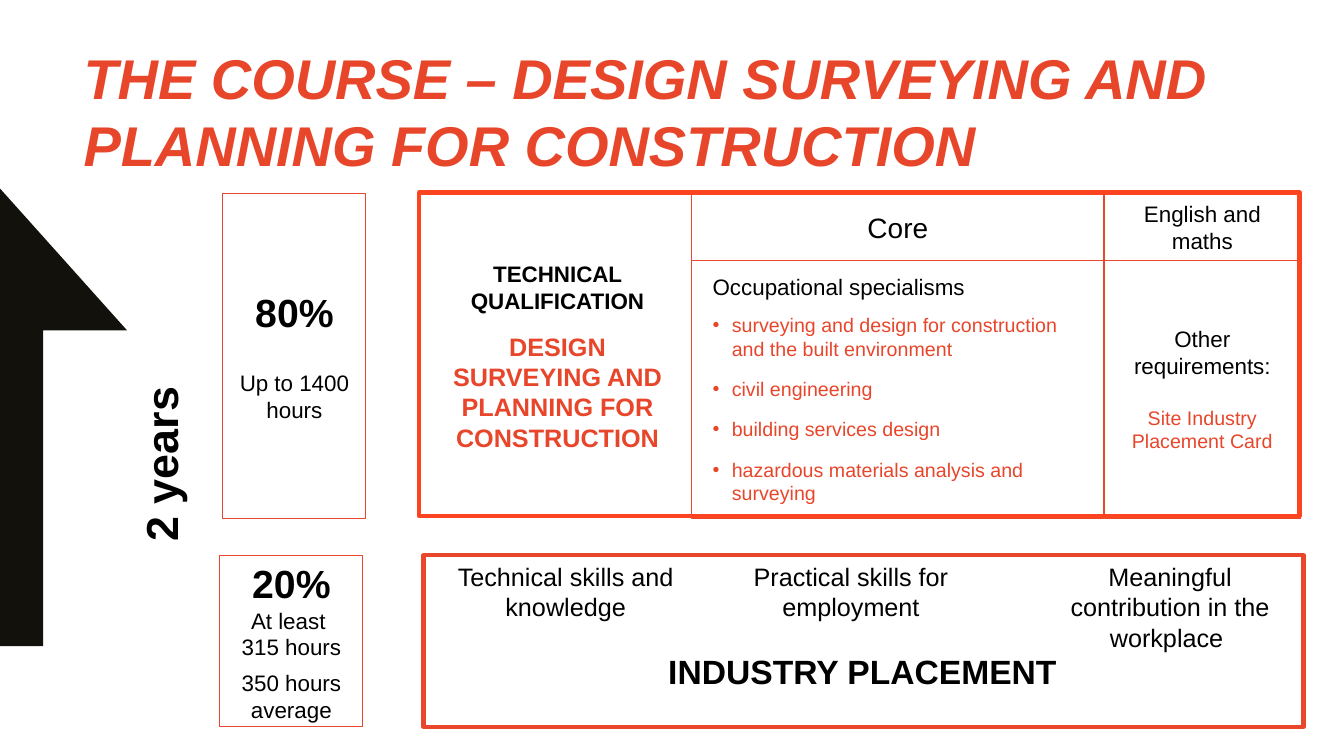
from lxml import etree
from pptx import Presentation
from pptx import util as u
from pptx.dml.color import RGBColor
from pptx.enum import shapes, text
from pptx.oxml.ns import qn

WIDTH, HEIGHT = 13.33, 7.5
COLORS = {"ink": "000000", "arrow": "12110C", "accent": "E8462B",
          "line": "E8472B", "frame": "FC4421", "white": "FFFFFF"}
CENTER, LEFT = text.PP_ALIGN.CENTER, text.PP_ALIGN.LEFT
MIDDLE, TOP = text.MSO_ANCHOR.MIDDLE, text.MSO_ANCHOR.TOP


def color(name):
    return RGBColor.from_string(COLORS[name])


def line(words, size=16, ink="ink", before=0, after=0, bullet=None, indent=False, **style):
    """Describe one paragraph; style holds extra font attributes."""
    return {"words": words, "ink": ink, "bullet": bullet, "indent": indent,
            "space": {"space_before": u.Pt(before), "space_after": u.Pt(after)},
            "font": {"name": "Arial", "size": u.Pt(size), **style}}


def write(shape, lines, align=CENTER, anchor=MIDDLE):
    frame = shape.text_frame
    frame.word_wrap = True
    frame.vertical_anchor = anchor
    for number, item in enumerate(lines):
        para = frame.add_paragraph() if number else frame.paragraphs[0]
        for key, value in {"alignment": align, **item["space"]}.items():
            setattr(para, key, value)
        if item["indent"]:
            props = para._p.get_or_add_pPr()
            props.set("marL", str(u.Inches(0.3)))
            props.set("indent", str(u.Inches(-0.19)))
        if item["bullet"]:
            para.level = 1
            etree.SubElement(props, qn("a:buFont")).set("typeface", "Arial")
            etree.SubElement(props, qn("a:buChar")).set("char", item["bullet"])
        span = para.add_run()
        span.text = item["words"]
        for key, value in item["font"].items():
            setattr(span.font, key, value)
        span.font.color.rgb = color(item["ink"])


def add_label(parts, box, lines, align=CENTER, anchor=MIDDLE):
    label = parts.add_textbox(*map(u.Inches, box))
    write(label, lines, align, anchor)
    return label


def add_box(parts, box, lines=(), edge="line", weight=0.75, fill=None, align=CENTER):
    shape = parts.add_shape(shapes.MSO_SHAPE.RECTANGLE, *map(u.Inches, box))
    shape.shadow.inherit = False
    if fill:
        shape.fill.solid()
        shape.fill.fore_color.rgb = color(fill)
    else:
        shape.fill.background()
    if edge:
        shape.line.color.rgb = color(edge)
        shape.line.width = u.Pt(weight)
    else:
        shape.line.fill.background()
    write(shape, lines, align)


def draw_arrow(parts, box):
    """Upward half arrow running off the left edge."""
    left, top, width, height = box
    shaft, neck = left + 0.34 * width, top + 0.31 * height
    points = [(left, top), (left + width, neck), (shaft, neck),
              (shaft, top + height), (left, top + height)]
    builder = parts.build_freeform(*map(u.Inches, points[0]), scale=1.0)
    builder.add_line_segments([tuple(map(u.Inches, p)) for p in points[1:]], close=True)
    arrow = builder.convert_to_shape()
    arrow.shadow.inherit = False
    arrow.fill.solid()
    arrow.fill.fore_color.rgb = color("arrow")
    arrow.line.fill.background()


def draw_duration(parts, box):
    label = add_label(parts, box, [line("2 years", 32, bold=True)])
    label.rotation = 270


def draw_shares(parts, box):
    """Share of time: classroom above, placement below."""
    left, top, width, height = box
    add_box(parts, (left + 0.03, top, width, 3.22), [
        line("80%", 28, after=24, bold=True),
        line("Up to 1400 hours")])
    add_box(parts, (left, top + height - 1.7, width, 1.7), [
        line("20%", 28, bold=True),
        line("At least "),
        line("315 hours", after=6),
        line("350 hours average")])


def draw_qualification(parts, box):
    """Heading column plus a two by two grid, inside a thick frame."""
    left, top, width, height = box
    widths, heights = (2.66, 4.09, 1.95), (0.65, 2.56)
    xs = [left + 0.04 + sum(widths[:n]) for n in range(3)]
    ys = [top + 0.02 + sum(heights[:n]) for n in range(2)]

    def cell(column, row):
        return xs[column], ys[row], widths[column], heights[row]

    add_label(parts, (xs[0], ys[0], widths[0], sum(heights)), [
        line("TECHNICAL QUALIFICATION", after=6, bold=True),
        line("DESIGN SURVEYING AND PLANNING FOR CONSTRUCTION", 18, "accent",
             before=6, after=6, bold=True)])
    add_box(parts, cell(1, 0), [line("Core", 20)])
    specialisms = ["surveying and design for construction and the built environment",
                   "civil engineering", "building services design",
                   "hazardous materials analysis and surveying"]
    add_box(parts, cell(1, 1), [line("Occupational specialisms", after=3, indent=True)] + [
        line(name, 14, "accent", before=6, after=6, bullet="•", indent=True)
        for name in specialisms], align=LEFT)
    add_box(parts, cell(2, 0), [line("English and maths")])
    add_box(parts, cell(2, 1), [
        line("Other requirements:", after=19),
        line("Site Industry Placement Card", 14, "accent")])
    add_box(parts, box, edge="frame", weight=3)


def draw_placement(parts, box):
    """Three outcomes over the placement heading, in one group."""
    left, top, width, height = box
    group = parts.add_group_shape().shapes
    outcomes = [(0.05, 2.72, 0.83, "Technical skills and knowledge"),
                (2.86, 2.76, 0.81, "Practical skills for employment"),
                (6.12, 2.57, 1.17, "Meaningful contribution in the workplace ")]
    add_box(group, (left + 0.11, top + 0.57 * height, width - 0.15, 0.35),
            [line("INDUSTRY PLACEMENT ", 24, bold=True)], edge=None, fill="white")
    add_box(group, box, weight=3)
    for offset, span_width, depth, words in outcomes:
        add_label(group, (left + offset, top + 0.01, span_width, depth),
                  [line(words, 18)], anchor=TOP)


def draw_title(parts, box):
    add_label(parts, box, [
        line("THE COURSE – DESIGN SURVEYING AND PLANNING FOR CONSTRUCTION", 40,
             "accent", bold=True, italic=True)], align=LEFT, anchor=TOP)


def main():
    deck = Presentation()
    deck.slide_width, deck.slide_height = u.Inches(WIDTH), u.Inches(HEIGHT)
    page = deck.slides.add_slide(deck.slide_layouts[6])
    regions = [(draw_arrow, (0, 1.87, 1.26, 4.54)),
               (draw_shares, (2.18, 1.92, 1.42, 5.29)),
               (draw_duration, (-0.98, 4.37, 5.14, 0.47)),
               (draw_qualification, (4.16, 1.91, 8.73, 3.21)),
               (draw_placement, (4.2, 5.51, 8.73, 1.7)),
               (draw_title, (0.73, 0.38, 11.81, 1.42))]
    for draw, box in regions:
        draw(page.shapes, box)
    deck.save("out.pptx")


if __name__ == "__main__":
    main()
